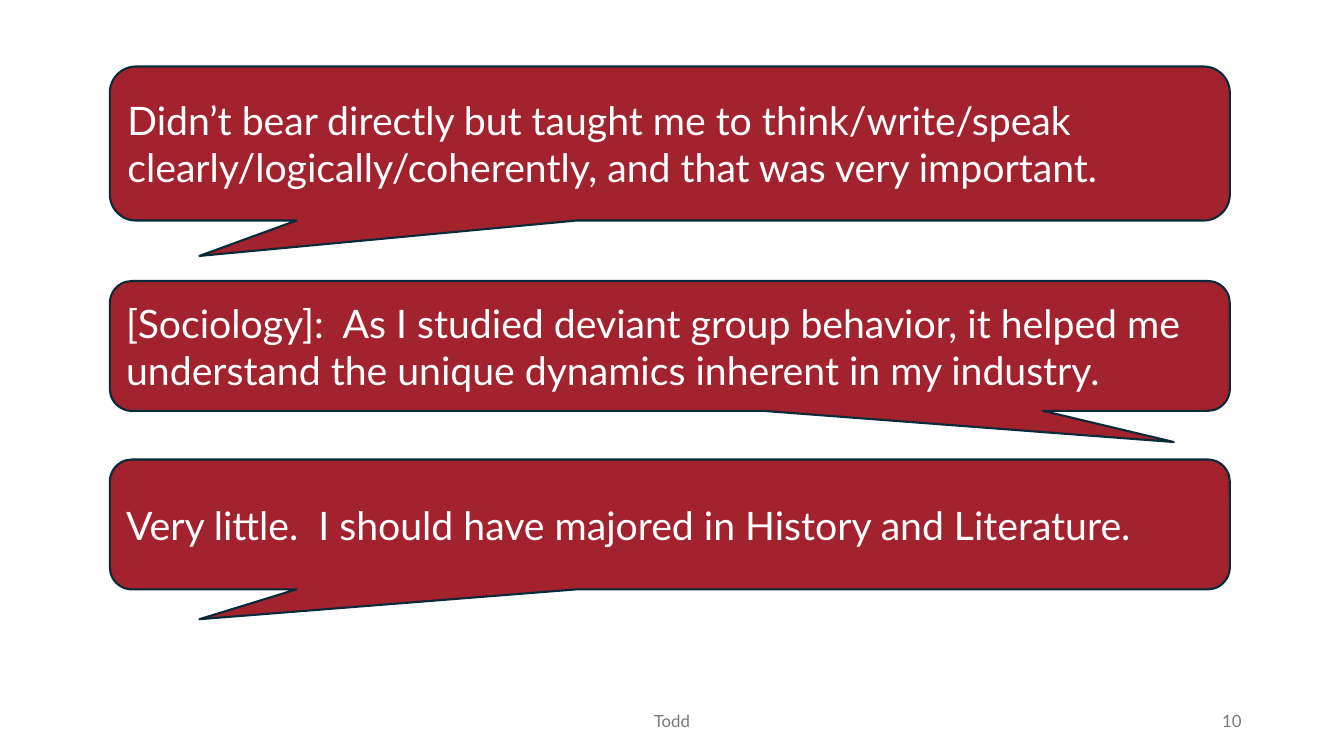
from dataclasses import dataclass

from pptx import Presentation
from pptx.dml.color import RGBColor
from pptx.enum.shapes import MSO_SHAPE
from pptx.enum.text import MSO_ANCHOR, PP_ALIGN
from pptx.slide import Slide
from pptx.text.text import TextFrame
from pptx.util import Pt

CALLOUT_SHAPE = MSO_SHAPE.ROUNDED_RECTANGULAR_CALLOUT
MIDDLE = MSO_ANCHOR.MIDDLE
LEFT, CENTER, RIGHT = PP_ALIGN.LEFT, PP_ALIGN.CENTER, PP_ALIGN.RIGHT

FONT = "Lato"
RED = "A2222E"
NAVY = "092A39"
WHITE = "FFFFFF"
GRAY = "797979"

CALLOUT_LEFT = 78.5
CALLOUT_WIDTH = 800
FOOTER_TOP = 500.5
FOOTER_HEIGHT = 28.75

# Callout tip, as a fraction of the size from the centre
TIP_LEFT = (-0.42, 0.73)
TIP_RIGHT = (0.45, 0.74)
CORNER = 0.17


@dataclass
class Quote:
    text: str
    top: float
    height: float
    tip: tuple[float, float]


@dataclass
class FooterItem:
    text: str
    left: float
    width: float
    alignment: PP_ALIGN


QUOTES = [
    Quote("Didn’t bear directly but taught me to think/write/speak "
          "clearly/logically/coherently, and that was very important.",
          47.5, 110, TIP_LEFT),
    Quote("[Sociology]:  As I studied deviant group behavior, it helped me "
          "understand the unique dynamics inherent in my industry.",
          200.75, 92.75, TIP_RIGHT),
    Quote("Very little.  I should have majored in History and Literature.",
          328.25, 92.75, TIP_LEFT),
]

FOOTER = [
    FooterItem("Todd", 318, 324, CENTER),
    FooterItem("10", 678, 216, RIGHT),
]


def color(hex_code: str) -> RGBColor:
    return RGBColor.from_string(hex_code)


def write_text(frame: TextFrame, text: str, size: float, hex_code: str,
               alignment: PP_ALIGN) -> None:
    frame.word_wrap = True
    frame.vertical_anchor = MIDDLE
    paragraph = frame.paragraphs[0]
    paragraph.alignment = alignment
    run = paragraph.add_run()
    run.text = text
    run.font.name = FONT
    run.font.size = Pt(size)
    run.font.color.rgb = color(hex_code)


def add_quote(slide: Slide, quote: Quote) -> None:
    shape = slide.shapes.add_shape(
        CALLOUT_SHAPE, Pt(CALLOUT_LEFT), Pt(quote.top),
        Pt(CALLOUT_WIDTH), Pt(quote.height))
    for index, value in enumerate((*quote.tip, CORNER)):
        shape.adjustments[index] = value
    shape.shadow.inherit = False
    shape.fill.solid()
    shape.fill.fore_color.rgb = color(RED)
    shape.line.color.rgb = color(NAVY)
    shape.line.width = Pt(1.5)
    write_text(shape.text_frame, quote.text, 28, WHITE, LEFT)


def add_footer_item(slide: Slide, item: FooterItem) -> None:
    box = slide.shapes.add_textbox(
        Pt(item.left), Pt(FOOTER_TOP), Pt(item.width), Pt(FOOTER_HEIGHT))
    write_text(box.text_frame, item.text, 12, GRAY, item.alignment)


def main() -> None:
    presentation = Presentation()
    presentation.slide_width = Pt(960)
    presentation.slide_height = Pt(540)
    slide = presentation.slides.add_slide(presentation.slide_layouts[6])
    for item in FOOTER:
        add_footer_item(slide, item)
    for quote in QUOTES:
        add_quote(slide, quote)
    presentation.save("out.pptx")


if __name__ == "__main__":
    main()
